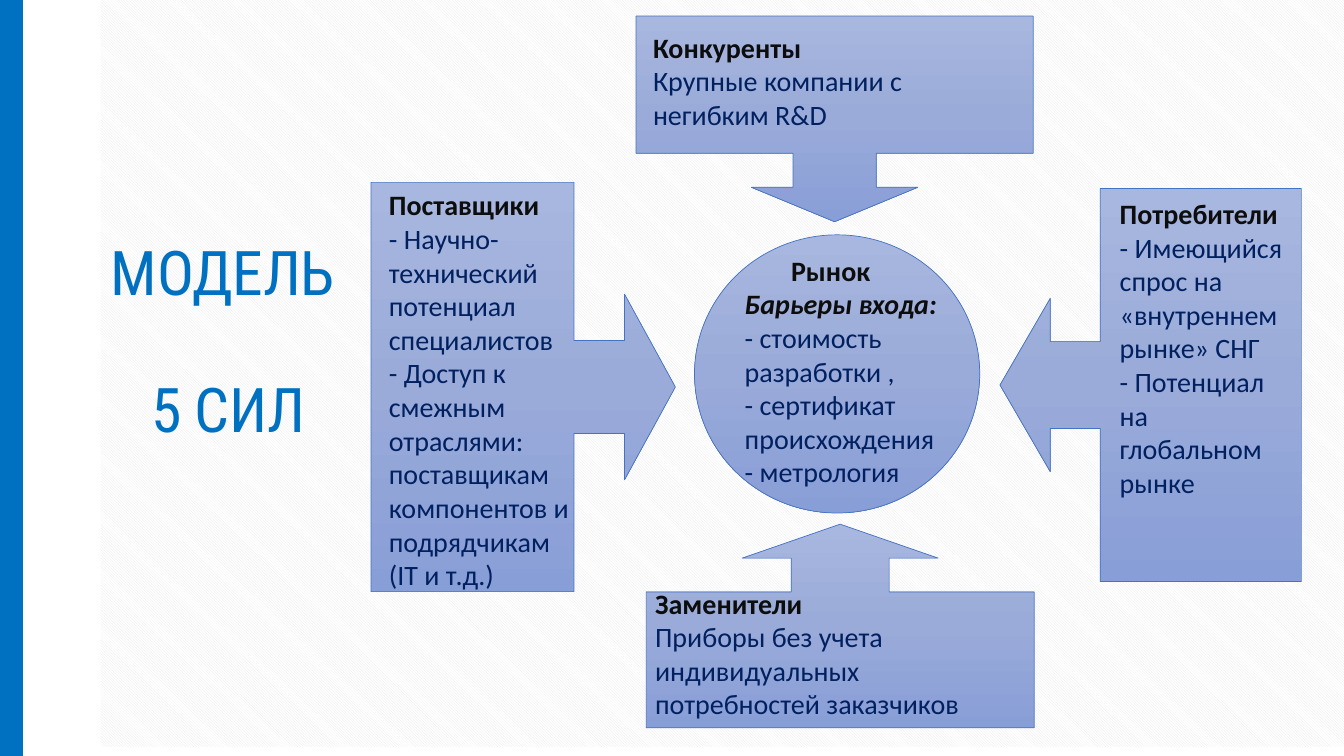
from copy import deepcopy

from pptx import Presentation
from pptx import util as u
from pptx.dml.color import RGBColor
from pptx.enum import dml, shapes, text

BLUE = RGBColor(0x00, 0x70, 0xC0)
NAVY = RGBColor(0x00, 0x20, 0x60)
BLACK = RGBColor(0x0D, 0x0D, 0x0D)
STRIPE = RGBColor(0xE6, 0xE6, 0xE6)
WHITE = RGBColor(0xFF, 0xFF, 0xFF)
EDGE = RGBColor(0x44, 0x72, 0xC4)
GRADIENT = [RGBColor(0xA8, 0xB7, 0xDF), RGBColor(0x9A, 0xAB, 0xD9), RGBColor(0x88, 0x9E, 0xD7)]
SHAPE = shapes.MSO_SHAPE

prs = Presentation()
prs.slide_width, prs.slide_height = u.Inches(13.33), u.Inches(7.5)
s = prs.slides.add_slide(prs.slide_layouts[5])

# Grid of 40 columns and 30 rows
COL, ROW = prs.slide_width / 40, prs.slide_height / 30


def cells(left, top, width, height):
    return [round(n) for n in (left * COL, top * ROW, width * COL, height * ROW)]


def add_shape(kind, place):
    sp = s.shapes.add_shape(kind, *cells(*place))
    sp.shadow.inherit = False
    return sp


# Striped background and side bar
sp = add_shape(SHAPE.RECTANGLE, (3, -0.36, 37.23, 30))
sp.fill.patterned()
sp.fill.pattern = dml.MSO_PATTERN.DARK_DOWNWARD_DIAGONAL
sp.fill.fore_color.rgb, sp.fill.back_color.rgb = STRIPE, WHITE
sp.line.fill.background()

sp = add_shape(SHAPE.RECTANGLE, (-0.03, 0, 0.69, 30))
sp.fill.solid()
sp.fill.fore_color.rgb = sp.line.color.rgb = BLUE
sp.line.width = u.Pt(1)

# Title, raised in front of the background
title = s.shapes.title
sp._element.addnext(title._element)
title.left, title.top, title.width, title.height = cells(3, 10.44, 7.5, 6.44)
tf = title.text_frame
tf.text = "МОДЕЛЬ\n5 СИЛ"
tf.auto_size = text.MSO_AUTO_SIZE.NONE
tf.vertical_anchor = text.MSO_ANCHOR.MIDDLE
for p in tf.paragraphs:
    p.alignment = text.PP_ALIGN.LEFT
    p.line_spacing = 0.9
    p.font.name, p.font.size, p.font.color.rgb = "Roboto Condensed", u.Pt(44), BLUE
    p.runs[0].font._element.set("spc", "-30")
p.space_before = u.Pt(50)
p._p.get_or_add_pPr().set("marL", str(u.Inches(0.4)))

# Market circle and the four forces around it: shape, place, arrow width
forces = [
    (SHAPE.OVAL, (20.67, 9.32, 8.49, 11.04), None),
    (SHAPE.DOWN_ARROW_CALLOUT, (18.93, 0.64, 11.82, 8.16), 0.404),
    (SHAPE.RIGHT_ARROW_CALLOUT, (11.04, 7.24, 9.06, 16.24), 0.305),
    (SHAPE.UP_ARROW_CALLOUT, (19.23, 20.8, 11.55, 8.08), 0.481),
    (SHAPE.LEFT_ARROW_CALLOUT, (29.76, 7.48, 8.97, 15.6), 0.288),
]
for kind, place, arrow in forces:
    sp = add_shape(kind, place)
    if arrow:
        for i, value in enumerate((arrow, arrow, 0.167, 0.667)):
            sp.adjustments[i] = value
    sp.fill.gradient()
    sp.fill.gradient_angle = 270
    first = sp._element.xpath(".//a:gs")[0]
    first.addnext(deepcopy(first))
    for i, stop in enumerate(sp.fill.gradient_stops):
        stop.color.rgb, stop.position = GRADIENT[i], i / 2
    sp.line.color.rgb, sp.line.width = EDGE, u.Pt(0.5)

# Captions: place, black bold headings, navy lines
captions = [
    ((11.28, 7.26, 6.21, 17.76), ["Поставщики"],
     ["- Научно-технический потенциал специалистов",
      "- Доступ к смежным отраслями: поставщикам компонентов и подрядчикам",
      "(IT и т.д.)"]),
    ((19.14, 1, 10.62, 4.44), ["Конкуренты"], ["Крупные компании с негибким R&D"]),
    ((19.2, 23.06, 11.22, 5.8), ["Заменители"],
     ["Приборы без учета индивидуальных потребностей заказчиков"]),
    ((21.87, 9.85, 6.93, 9.84), ["Рынок", "Барьеры входа:"],
     ["- стоимость", "разработки ,", "- сертификат", "происхождения", "- метрология"]),
    ((33.03, 7.6, 5.85, 12.52), ["Потребители"],
     ["- Имеющийся спрос на «внутреннем рынке» СНГ",
      "- Потенциал на глобальном рынке"]),
]
for place, headings, lines in captions:
    tf = s.shapes.add_textbox(*cells(*place)).text_frame
    tf.word_wrap = True
    tf.text = "\n".join(headings + lines)
    for i, p in enumerate(tf.paragraphs):
        heading = i < len(headings)
        p.font.name, p.font.size = "Calibri", u.Pt(20)
        p.font.bold = heading
        p.font.color.rgb = BLACK if heading else NAVY
    if len(headings) == 2:
        tf.paragraphs[0]._p.get_or_add_pPr().set("marL", str(u.Inches(0.46)))
        tf.paragraphs[1].font.italic = True

prs.save("out.pptx")
